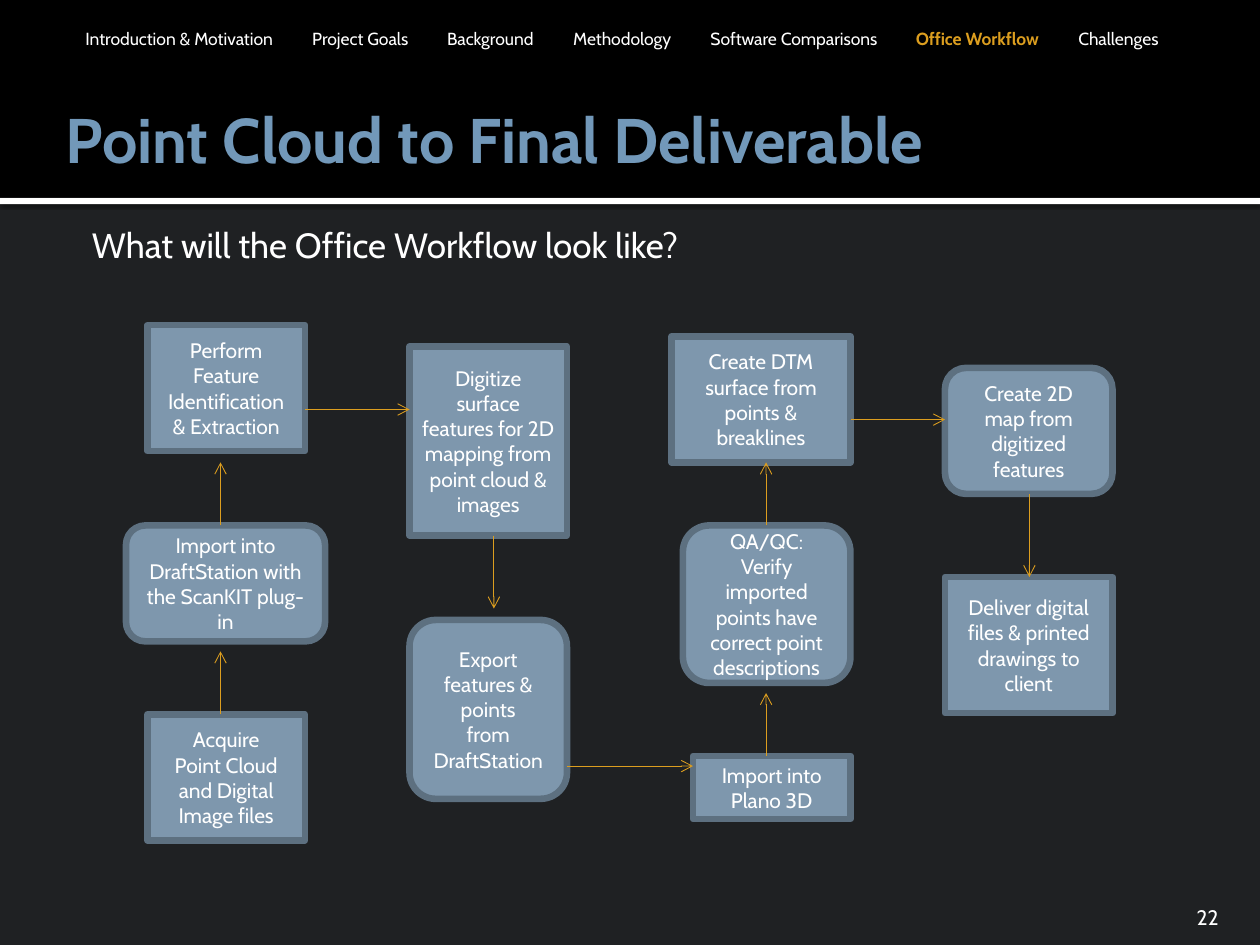
from lxml import etree
from pptx import Presentation
from pptx.dml.color import RGBColor
from pptx.enum.shapes import MSO_CONNECTOR, MSO_SHAPE
from pptx.enum.text import MSO_ANCHOR, PP_ALIGN
from pptx.oxml import parse_xml
from pptx.oxml.ns import qn
from pptx.util import Inches, Pt

FONT = "Cabin"
WHITE, BLACK, GOLD = "FFFFFF", "000000", "DC9E1F"
BACKGROUND, TITLE_BLUE = "1F2123", "7298B9"
BOX_FILL, BOX_LINE = "7E97AD", "5D7080"

TITLE = "Point Cloud to Final Deliverable"
QUESTION = "What will the Office Workflow look like?"
PAGE_NUMBER = "22"
SECTIONS = [
    ("Introduction & Motivation", 0),
    ("Project Goals", 1.8),
    ("Background", 2.87),
    ("Methodology", 3.87),
    ("Software Comparisons", 4.96),
    ("Office Workflow", 6.59),
    ("Challenges", 7.88),
]
CURRENT_SECTION = "Office Workflow"

PROCESS = MSO_SHAPE.FLOWCHART_PROCESS
ROUNDED = MSO_SHAPE.FLOWCHART_ALTERNATE_PROCESS
STEPS = [
    (PROCESS, (1.17, 5.67, 1.25, 1), ["Acquire", "Point Cloud", "and Digital Image files"]),
    (ROUNDED, (1, 4.17, 1.58, 0.92), ["Import into DraftStation with the ScanKIT plug-in"]),
    (PROCESS, (1.17, 2.58, 1.25, 1), ["Perform Feature Identification & Extraction"]),
    (PROCESS, (3.25, 2.75, 1.25, 1.5),
     ["Digitize surface features for 2D mapping from point cloud & images"]),
    (ROUNDED, (3.25, 4.92, 1.25, 1.42), ["Export features & points", "from DraftStation"]),
    (PROCESS, (5.5, 6, 1.25, 0.5), ["Import into Plano 3D"]),
    (ROUNDED, (5.42, 4.17, 1.33, 1.25),
     ["QA/QC: Verify imported points have correct point descriptions"]),
    (PROCESS, (5.33, 2.67, 1.42, 1), ["Create DTM surface from points & breaklines"]),
    (ROUNDED, (7.5, 2.92, 1.33, 1), ["Create 2D map from digitized features"]),
    (PROCESS, (7.5, 4.58, 1.33, 1.08), ["Deliver digital files & printed drawings to client"]),
]
ARROWS = [
    (1.75, 5.67, 1.75, 5.17),
    (1.75, 4.17, 1.75, 3.67),
    (2.42, 3.25, 3.25, 3.25),
    (3.92, 4.25, 3.92, 4.83),
    (4.5, 6.08, 5.5, 6.08),
    (6.08, 6, 6.08, 5.5),
    (6.08, 4.17, 6.08, 3.67),
    (6.75, 3.33, 7.5, 3.33),
    (8.17, 3.92, 8.17, 4.58),
]
BAR_SHADOW = (
    '<a:effectLst xmlns:a="http://schemas.openxmlformats.org/drawingml/2006/main">'
    '<a:outerShdw blurRad="31750" dist="10160" dir="5400000" rotWithShape="0">'
    '<a:srgbClr val="000000"><a:alpha val="60000"/></a:srgbClr>'
    '</a:outerShdw></a:effectLst>'
)


def color(value):
    return RGBColor.from_string(value)


def apply(target, values):
    for name, value in values.items():
        setattr(target, name, value)


def add_run(paragraph, text, size, ink=WHITE, bold=False):
    run = paragraph.add_run()
    run.text = text
    apply(run.font, {"name": FONT, "size": Pt(size), "bold": bold})
    run.font.color.rgb = color(ink)


def add_text_box(slide, box, margins=(0.1, 0.05, 0.1, 0.05), anchor=MSO_ANCHOR.TOP):
    frame = slide.shapes.add_textbox(*map(Inches, box)).text_frame
    left, top, right, bottom = map(Inches, margins)
    apply(frame, {
        "word_wrap": True, "vertical_anchor": anchor, "margin_left": left,
        "margin_top": top, "margin_right": right, "margin_bottom": bottom,
    })
    return frame.paragraphs[0]


def add_box(slide, kind, box, fill, line=None):
    shape = slide.shapes.add_shape(kind, *map(Inches, box))
    shape.shadow.inherit = False
    shape.fill.solid()
    shape.fill.fore_color.rgb = color(fill)
    if line:
        shape.line.color.rgb = color(line)
        shape.line.width = Pt(3.78)
    else:
        shape.line.fill.background()
    return shape


def add_step(slide, kind, box, lines):
    frame = add_box(slide, kind, box, BOX_FILL, BOX_LINE).text_frame
    apply(frame, {"word_wrap": True, "vertical_anchor": MSO_ANCHOR.MIDDLE})
    for index, line in enumerate(lines):
        paragraph = frame.add_paragraph() if index else frame.paragraphs[0]
        paragraph.alignment = PP_ALIGN.CENTER
        add_run(paragraph, line, 12)


def add_arrow(slide, points):
    connector = slide.shapes.add_connector(MSO_CONNECTOR.STRAIGHT, *map(Inches, points))
    connector.line.color.rgb = color(GOLD)
    connector.line.width = Pt(0.5)
    etree.SubElement(connector.line._get_or_add_ln(), qn("a:tailEnd"), type="arrow")
    etree.SubElement(connector._element.spPr, qn("a:effectLst"))


def add_header(slide):
    bar = add_box(slide, MSO_SHAPE.RECTANGLE, (0, 1.57, 10, 0.05), WHITE)
    properties = bar._element.spPr
    properties.replace(properties.find(qn("a:effectLst")), parse_xml(BAR_SHADOW))
    add_box(slide, MSO_SHAPE.RECTANGLE, (0, 0, 10, 1.57), BLACK)

    title = add_text_box(slide, (0.42, 0.58, 9, 1.04), (0.1, 0.05, 0.05, 0.05), MSO_ANCHOR.MIDDLE)
    add_run(title, TITLE, 36, TITLE_BLUE, True)

    navigation = add_text_box(slide, (0.58, 0.17, 8.83, 0.27))
    tabs = etree.SubElement(navigation._p.get_or_add_pPr(), qn("a:tabLst"))
    for name, position in SECTIONS:
        if position:
            etree.SubElement(tabs, qn("a:tab"), pos=str(Inches(position)), algn="l")
        current = name == CURRENT_SECTION
        text = "\t" + name if position else name
        add_run(navigation, text, 10, GOLD if current else WHITE, current)


def main():
    presentation = Presentation()
    apply(presentation, {"slide_width": Inches(10), "slide_height": Inches(7.5)})
    slide = presentation.slides.add_slide(presentation.slide_layouts[6])
    slide.background.fill.solid()
    slide.background.fill.fore_color.rgb = color(BACKGROUND)

    add_header(slide)
    question = add_text_box(slide, (0.5, 1.67, 8.42, 0.59), (0.23, 0.1, 0.1, 0.05))
    add_run(question, QUESTION, 20)
    for step in STEPS:
        add_step(slide, *step)
    for points in ARROWS:
        add_arrow(slide, points)
    number = add_text_box(slide, (8.97, 7.08, 0.8, 0.3), (0.1, 0.05, 0.1, 0), MSO_ANCHOR.BOTTOM)
    number.alignment = PP_ALIGN.RIGHT
    add_run(number, PAGE_NUMBER, 12)
    presentation.save("out.pptx")


if __name__ == "__main__":
    main()
